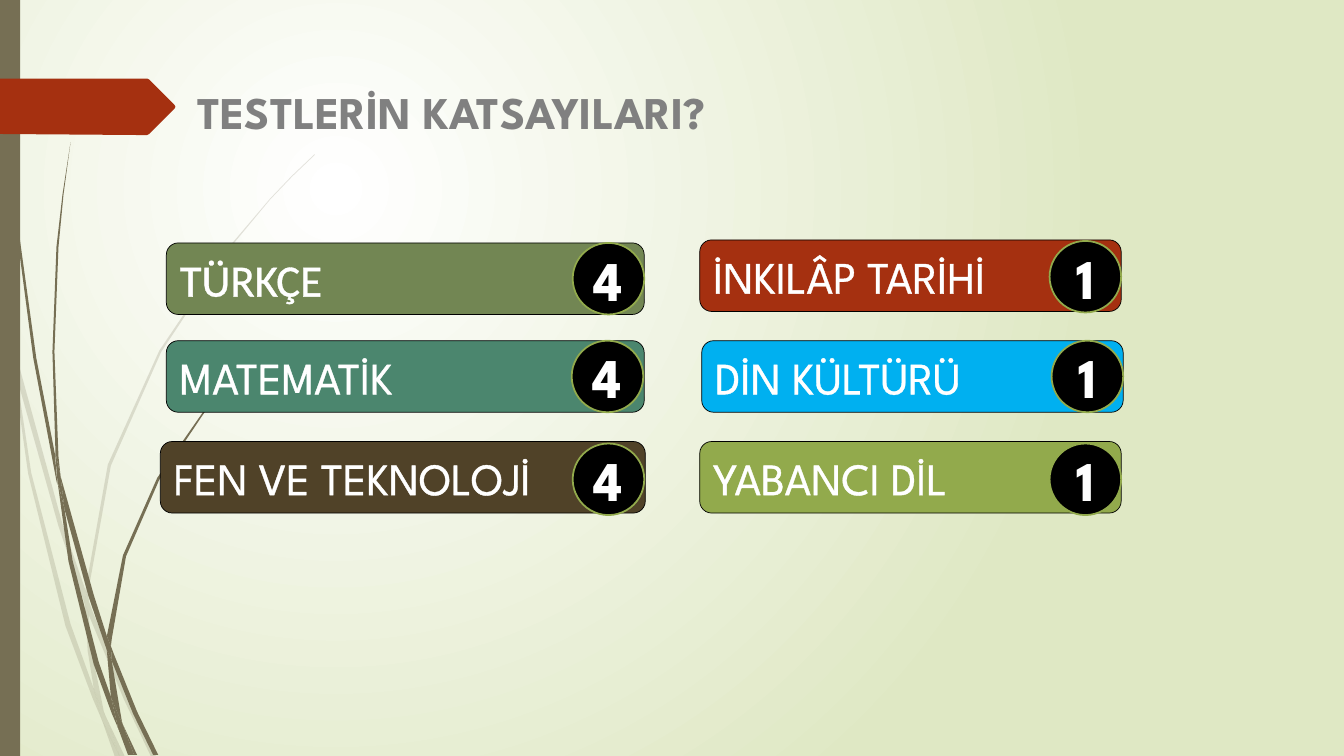
from lxml.etree import SubElement
from pptx import Presentation
from pptx.dml.color import RGBColor
from pptx.enum.shapes import MSO_SHAPE
from pptx.enum.text import MSO_ANCHOR, PP_ALIGN
from pptx.oxml import parse_xml
from pptx.oxml.ns import nsdecls, qn
from pptx.util import Inches, Pt

COLORS = {
    "white": "FFFFFF", "black": "000000", "mist": "DFE8C4", "bark": "766F54",
    "rust": "A53010", "gray": "808080", "moss": "728653", "teal": "4B866E",
    "brown": "504228", "sky": "00B0F0", "lime": "92AA4C",
}
FONT = "League Spartan"
BADGE_FORMAT = {"name": FONT, "size": Pt(40), "bold": True}
TITLE_FORMAT = {"name": FONT, "size": Pt(32.4), "bold": True}
BAR_HEIGHT = 0.71

PALE_BLADES = [
    [(0.11, 3.5), (0.09, 3.22), (0, 2.82), (0, 2.99), (0.1, 3.44)],
    [(0.58, 5.22), (0.84, 5.99), (0.85, 5.86), (0.62, 5.2), (0.14, 3.45),
     (0.17, 3.76)],
    [(0.92, 6.07), (0.88, 5.96), (0.88, 6.1), (1.23, 6.94), (1.5, 7.51),
     (1.55, 7.51), (1.27, 6.92)],
    [(1.19, 7.51), (1.24, 7.51), (1.05, 7.11)],
    [(0.93, 6.83), (0.7, 6.19), (0.31, 4.69), (0.17, 3.76), (0.11, 3.5),
     (0.28, 4.7), (0.65, 6.21), (0.92, 6.93), (1.01, 7.14), (0.99, 7.07)],
    [(0.84, 5.99), (0.87, 6.46), (0.93, 6.83), (0.96, 6.92), (1.05, 7.11),
     (1.03, 7.06), (0.91, 6.46), (0.88, 6.1), (0.88, 6.08)],
    [(0.88, 5.84), (1.1, 4.62), (1.6, 3.49), (2.29, 2.45), (2.68, 1.98),
     (2.9, 1.75), (3.12, 1.54), (3.12, 1.53), (2.89, 1.75), (2.68, 1.97),
     (2.28, 2.44), (1.58, 3.48), (1.07, 4.61), (0.85, 5.84), (0.85, 5.86),
     (0.88, 5.96)],
    [(1.01, 7.14), (1.14, 7.51), (1.19, 7.51)],
    [(0.88, 6.08), (0.88, 6.1), (0.88, 5.96), (0.85, 5.86), (0.84, 5.99)],
    [(0.96, 6.92), (0.93, 6.83), (0.99, 7.07), (1.01, 7.14), (1.19, 7.51),
     (1.05, 7.11)],
]
DARK_BLADES = [
    [(0.07, 1.1), (0.17, 2.33), (0.33, 3.55), (0.56, 4.77), (0.57, 4.81),
     (0.55, 4.57), (0.55, 4.53), (0.36, 3.55), (0.19, 2.32), (0.08, 1.09),
     (0.05, 0.48), (0.04, 0), (0.03, 0), (0.04, 0.48)],
    [(0.88, 5.92), (1.06, 6.45), (1.06, 6.31), (0.93, 5.9), (0.6, 4.72),
     (0.64, 5.05)],
    [(1.13, 6.49), (1.1, 6.41), (1.11, 6.56), (1.32, 7.08), (1.52, 7.49),
     (1.57, 7.49), (1.36, 7.06)],
    [(1.1, 6.91), (0.98, 6.57), (0.72, 5.56), (0.64, 5.05), (0.57, 4.77),
     (0.68, 5.57), (0.93, 6.59), (1.11, 7.08), (1.17, 7.22), (1.16, 7.17)],
    [(0.6, 4.72), (0.58, 4.53), (0.54, 3.49), (0.58, 2.45), (0.63, 1.93),
     (0.7, 1.41), (0.62, 1.93), (0.56, 2.45), (0.52, 3.49), (0.55, 4.49)],
    [(1.33, 7.49), (1.36, 7.49), (1.22, 7.19)],
    [(0.57, 4.77), (0.64, 5.05), (0.6, 4.72), (0.55, 4.49), (0.55, 4.53)],
    [(1.11, 6.33), (1.25, 5.52), (1.58, 4.76), (2.05, 4.06), (2.31, 3.74),
     (2.45, 3.59), (2.61, 3.44), (2.6, 3.44), (2.45, 3.58), (2.31, 3.73),
     (2.04, 4.05), (1.56, 4.74), (1.22, 5.51), (1.06, 6.31), (1.1, 6.41)],
    [(1.17, 7.22), (1.27, 7.49), (1.31, 7.49)],
    [(1.06, 6.45), (1.1, 6.91), (1.16, 7.06), (1.22, 7.19), (1.21, 7.16),
     (1.11, 6.56), (1.09, 6.51)],
    [(1.06, 6.45), (1.09, 6.51), (1.11, 6.56), (1.1, 6.41), (1.06, 6.31)],
    [(1.16, 7.06), (1.1, 6.91), (1.16, 7.17), (1.17, 7.22), (1.3, 7.49),
     (1.33, 7.49), (1.22, 7.19)],
]
TAG_OUTLINE = [
    (1.73, 0.3), (1.48, 0.55), (1.46, 0.56), (1.36, 0.56), (0, 0.55), (0, 0),
    (1.36, 0), (1.46, 0), (1.48, 0.01), (1.73, 0.26), (1.74, 0.28),
]
SUBJECTS = [
    ("TÜRKÇE", "Calibri", "moss", (1.65, 2.41, 4.74), "4", (5.68, 2.41)),
    ("FEN VE TEKNOLOJİ", FONT, "brown", (1.59, 4.38, 4.81), "4", (5.68, 4.4)),
    ("MATEMATİK", FONT, "teal", (1.65, 3.38, 4.74), "4", (5.67, 3.38)),
    ("İNKILÂP TARİHİ", FONT, "rust", (6.94, 2.38, 4.18), "1", (10.41, 2.39)),
    ("DİN KÜLTÜRÜ", FONT, "sky", (6.96, 3.38, 4.18), "1", (10.43, 3.38)),
    ("YABANCI DİL", FONT, "lime", (6.94, 4.38, 4.18), "1", (10.41, 4.4)),
]


def rgb(name):
    """Return the named colour."""
    return RGBColor.from_string(COLORS[name])


def paint(shape, fill, line=None, width=0):
    """Give a shape a flat fill and an optional outline."""
    shape.shadow.inherit = False
    shape.fill.solid()
    shape.fill.fore_color.rgb = rgb(fill)
    if line:
        shape.line.color.rgb = rgb(line)
        shape.line.width = Pt(width)
    else:
        shape.line.fill.background()


def write(shape, text, color, formats, anchor, align=PP_ALIGN.LEFT):
    """Write one formatted line in a shape and return its run."""
    frame = shape.text_frame
    frame.word_wrap = True
    frame.vertical_anchor = anchor
    paragraph = frame.paragraphs[0]
    paragraph.alignment = align
    run = paragraph.add_run()
    run.text = text
    for attribute, value in formats.items():
        setattr(run.font, attribute, value)
    run.font.color.rgb = rgb(color)
    return run


def add_outline(slide, left, top, points, fill, opacity=100):
    """Draw a closed, filled outline through points relative to a corner."""
    corners = [(Inches(left + x), Inches(top + y)) for x, y in points]
    builder = slide.shapes.build_freeform(*corners[0])
    builder.add_line_segments(corners[1:], close=True)
    shape = builder.convert_to_shape()
    paint(shape, fill)
    if opacity < 100:
        color = next(shape.fill._xPr.iter(qn("a:srgbClr")))
        SubElement(color, qn("a:alpha"), val=str(opacity * 1000))


def add_background(slide):
    """Fill the slide with a round gradient around its upper left quarter."""
    fill = slide.background.fill
    fill.gradient()
    for stop, name, position in zip(fill.gradient_stops, ("white", "mist"), (0, 1)):
        stop.color.rgb = rgb(name)
        stop.position = position
    linear = next(slide.background._cSld.iter(qn("a:lin")))
    linear.getparent().replace(linear, parse_xml(
        f'<a:path {nsdecls("a")} path="circle">'
        '<a:fillToRect l="50000" t="50000" r="100000" b="100000"/></a:path>'))


def add_decoration(slide, left, top, height):
    """Place the grass, the side band and the title tag."""
    for blades, opacity in ((PALE_BLADES, 20), (DARK_BLADES, 100)):
        for blade in blades:
            add_outline(slide, left, top, blade, "bark", opacity)
    band = slide.shapes.add_shape(
        MSO_SHAPE.RECTANGLE, Inches(left), Inches(top), Inches(0.2), Inches(height))
    paint(band, "bark")
    add_outline(slide, left, top + 0.78, TAG_OUTLINE, "rust")


def add_title(slide, left, top, width, height):
    """Write the slide title in its box."""
    box = slide.shapes.add_textbox(
        Inches(left), Inches(top), Inches(width), Inches(height))
    write(box, "TESTLERİN KATSAYILARI?", "gray", TITLE_FORMAT, MSO_ANCHOR.TOP)


def add_subject(slide, label, font, color, bar_box, weight, badge_corner):
    """Draw a subject bar with its weight in a round badge."""
    left, top, width = map(Inches, bar_box)
    size = Inches(BAR_HEIGHT)
    bar = slide.shapes.add_shape(
        MSO_SHAPE.FLOWCHART_ALTERNATE_PROCESS, left, top, width, size)
    paint(bar, color, "black", 0.5)
    run = write(bar, label, "white", {"name": font, "size": Pt(32)}, MSO_ANCHOR.MIDDLE)
    run.font._element.insert(0, parse_xml(
        f'<a:ln {nsdecls("a")} w="18415"><a:solidFill>'
        f'<a:srgbClr val="{COLORS["white"]}"/></a:solidFill></a:ln>'))
    badge = slide.shapes.add_shape(
        MSO_SHAPE.OVAL, *map(Inches, badge_corner), size, size)
    paint(badge, "black", "lime", 1.25)
    write(badge, weight, "white", BADGE_FORMAT, MSO_ANCHOR.MIDDLE, PP_ALIGN.CENTER)


def main():
    """Build the slide and save the presentation."""
    presentation = Presentation()
    presentation.slide_width = Inches(13.33)
    presentation.slide_height = Inches(7.5)
    slide = presentation.slides.add_slide(presentation.slide_layouts[6])
    add_background(slide)
    add_decoration(slide, 0, 0, 7.5)
    add_title(slide, 1.86, 0.79, 10.16, 1.29)
    for subject in SUBJECTS:
        add_subject(slide, *subject)
    presentation.save("out.pptx")


if __name__ == "__main__":
    main()
